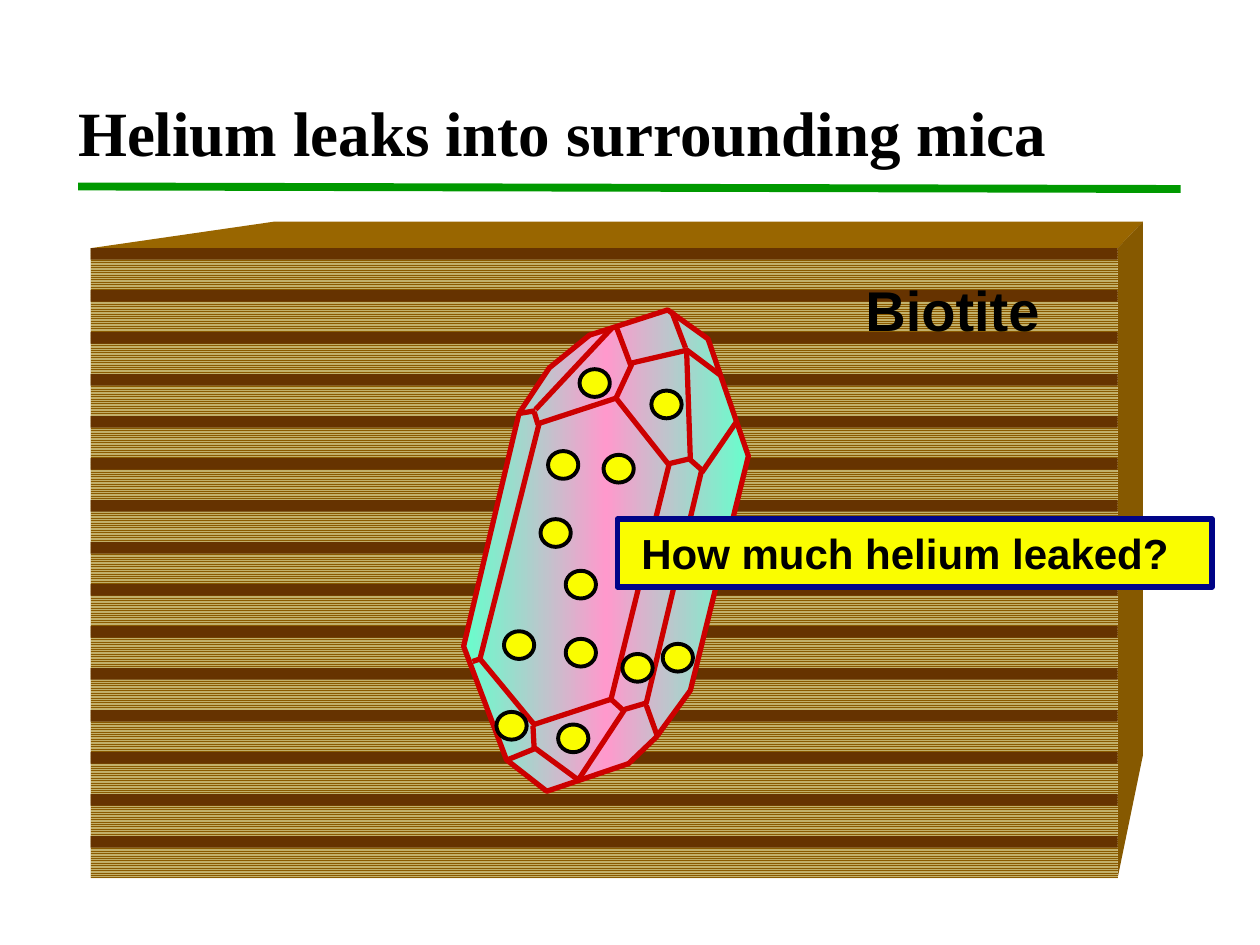
import copy
import dataclasses

import pptx
import pptx.dml.color
import pptx.enum.dml
import pptx.enum.shapes
import pptx.enum.text
import pptx.oxml
import pptx.oxml.ns
import pptx.util

SHAPE = pptx.enum.shapes.MSO_SHAPE
ANCHOR = pptx.enum.text.MSO_ANCHOR


@dataclasses.dataclass
class Theme:
    serif: str = "Times New Roman"
    sans: str = "Arial"
    title: int = 36
    label: int = 32
    note: int = 24
    ink: str = "000000"
    rule: str = "009900"
    edge: str = "CC0000"
    mint: str = "66FFCC"
    pink: str = "FF99CC"
    yellow: str = "FAFD00"
    navy: str = "000487"
    stripe: str = "663300"
    grain: str = "8A5A00"
    sand: str = "C2B06A"
    top: str = "996600"
    side: str = "865900"


def size(num):
    """Turn slide inches into a length."""
    return pptx.util.Cm(num * 2.54)


def color(code):
    return pptx.dml.color.RGBColor.from_string(code)


def write(shape, text, font, points, ink, anchor=ANCHOR.TOP, wrap=False, inset=0.1):
    frame = shape.text_frame
    frame.word_wrap = wrap
    frame.auto_size = pptx.enum.text.MSO_AUTO_SIZE.NONE
    frame.vertical_anchor = anchor
    frame.margin_left, frame.margin_right = size(inset), size(0.1)
    frame.margin_top = frame.margin_bottom = size(0.05)
    para = frame.paragraphs[0]
    para.text = text
    para.alignment = pptx.enum.text.PP_ALIGN.LEFT
    para.font.name = font
    para.font.size = pptx.util.Pt(points)
    para.font.bold = True
    para.font.color.rgb = color(ink)


class Canvas:
    def __init__(self, slide, theme):
        self.slide = slide
        self.theme = theme

    def paint(self, shape, fill=None, line=None, width=1):
        shape.shadow.inherit = False
        if fill:
            shape.fill.solid()
            shape.fill.fore_color.rgb = color(fill)
        else:
            shape.fill.background()
        if line:
            shape.line.color.rgb = color(line)
            shape.line.width = pptx.util.Pt(width)
        else:
            shape.line.fill.background()
        return shape

    def title(self, text, place):
        shape = self.slide.shapes.title
        shape.left, shape.top, shape.width, shape.height = map(size, place)
        write(shape, text, self.theme.serif, self.theme.title, self.theme.ink)

    def label(self, text, place):
        shape = self.slide.shapes.add_textbox(*map(size, place))
        write(shape, text, self.theme.sans, self.theme.label, self.theme.ink)

    def form(self, kind, place, **look):
        shape = self.slide.shapes.add_shape(kind, *map(size, place))
        return self.paint(shape, **look)

    def outline(self, points, close=True, **look):
        spots = [(size(x), size(y)) for x, y in points]
        maker = self.slide.shapes.build_freeform(*spots[0], scale=1.0)
        maker.add_line_segments(spots[1:], close=close)
        return self.paint(maker.convert_to_shape(), **look)

    def line(self, start, end, ink, width):
        kind = pptx.enum.shapes.MSO_CONNECTOR.STRAIGHT
        shape = self.slide.shapes.add_connector(kind, *map(size, start + end))
        shape.line.color.rgb = color(ink)
        shape.line.width = pptx.util.Pt(width)
        shape._element.spPr.append(pptx.oxml.parse_xml(
            "<a:effectLst %s/>" % pptx.oxml.ns.nsdecls("a")))

    def blend(self, shape, codes):
        """Fill with evenly spaced colours from left to right."""
        shape.fill.gradient()
        shape.fill.gradient_angle = 0
        stops = shape._element.spPr.find(".//" + pptx.oxml.ns.qn("a:gsLst"))
        while len(stops) < len(codes):
            stops.insert(1, copy.deepcopy(stops[0]))
        for num, (stop, code) in enumerate(zip(shape.fill.gradient_stops, codes)):
            stop.position = num / (len(codes) - 1)
            stop.color.rgb = color(code)


def draw_block(canvas):
    theme = canvas.theme
    left, top, right, base = 0.72, 1.97, 8.87, 6.97
    back, rear = 1.76, 9.07
    canvas.outline([(left, top), (2.17, back), (rear, back), (right, top)],
                   fill=theme.top)
    canvas.outline([(right, top), (rear, back), (rear, 6), (right, base)],
                   fill=theme.side)
    front = canvas.form(SHAPE.RECTANGLE, (left, top, right - left, base - top))
    front.fill.patterned()
    front.fill.pattern = pptx.enum.dml.MSO_PATTERN.NARROW_HORIZONTAL
    front.fill.fore_color.rgb = color(theme.grain)
    front.fill.back_color.rgb = color(theme.sand)
    count = 15
    pitch = (base - top) / count
    for row in range(count):
        canvas.form(SHAPE.RECTANGLE,
                    (left, top + row * pitch, right - left, 0.09),
                    fill=theme.stripe)


def draw_crystal(canvas):
    theme = canvas.theme
    edge = {"line": theme.edge, "width": 3}
    body = canvas.outline([
        (4.34, 6.28), (4.02, 6.03), (3.73, 5.26), (3.68, 5.13), (4.12, 3.28),
        (4.36, 2.92), (4.68, 2.66), (5.3, 2.46), (5.62, 2.69), (5.94, 3.62),
        (5.48, 5.48), (5.21, 5.85), (4.99, 6.06)], **edge)
    canvas.blend(body, [theme.mint, theme.pink, theme.mint])
    canvas.outline([
        (4.03, 6.03), (4.25, 5.94), (4.59, 6.19), (4.96, 5.63), (5.13, 5.58),
        (5.57, 3.73), (5.48, 3.65), (5.45, 2.78), (5.02, 2.88), (4.89, 3.16),
        (4.28, 3.36), (3.81, 5.23), (4.24, 5.75), (4.85, 5.55), (5.31, 3.69),
        (4.89, 3.16)], close=False, **edge)
    ridges = [
        ((4.24, 5.95), (4.23, 5.76)), ((5.22, 5.85), (5.13, 5.6)),
        ((5.57, 3.75), (5.85, 3.34)), ((5.31, 3.68), (5.48, 3.64)),
        ((5.72, 2.98), (5.44, 2.77)), ((5.44, 2.76), (5.33, 2.47)),
        ((3.75, 5.25), (3.81, 5.23)), ((4.96, 5.65), (4.85, 5.55)),
        ((4.27, 3.37), (4.24, 3.27)), ((4.25, 3.25), (4.86, 2.6)),
        ((5.01, 2.91), (4.89, 2.59)), ((4.25, 3.26), (4.13, 3.28))]
    for start, end in ridges:
        canvas.line(start, end, theme.edge, 3)


def draw_atoms(canvas):
    spots = [(4.79, 3.61), (4.29, 4.12), (5.17, 3.1), (4.6, 2.93),
             (4.49, 4.53), (4, 5.01), (5.26, 5.11), (4.43, 5.75),
             (4.35, 3.58), (3.94, 5.65), (4.49, 5.07), (4.94, 5.19)]
    for x, y in spots:
        canvas.form(SHAPE.OVAL, (x, y, 0.24, 0.22), fill=canvas.theme.yellow,
                    line=canvas.theme.ink, width=2.25)


def main():
    deck = pptx.Presentation()
    deck.slide_width, deck.slide_height = size(10), size(7.5)
    theme = Theme()
    canvas = Canvas(deck.slides.add_slide(deck.slide_layouts[5]), theme)
    canvas.line((0.62, 1.48), (9.37, 1.5), theme.rule, 4.5)
    canvas.title("Helium leaks into surrounding mica", (0.52, 0.69, 7.9, 0.7))
    draw_block(canvas)
    draw_crystal(canvas)
    canvas.label("Biotite", (6.77, 2.14, 1.58, 0.63))
    draw_atoms(canvas)
    note = canvas.form(SHAPE.RECTANGLE, (4.9, 4.12, 4.72, 0.54),
                       fill=theme.yellow, line=theme.navy, width=3)
    write(note, "How much helium leaked?", theme.sans, theme.note, theme.ink,
          anchor=ANCHOR.MIDDLE, wrap=True, inset=0.19)
    deck.save("out.pptx")


if __name__ == "__main__":
    main()
